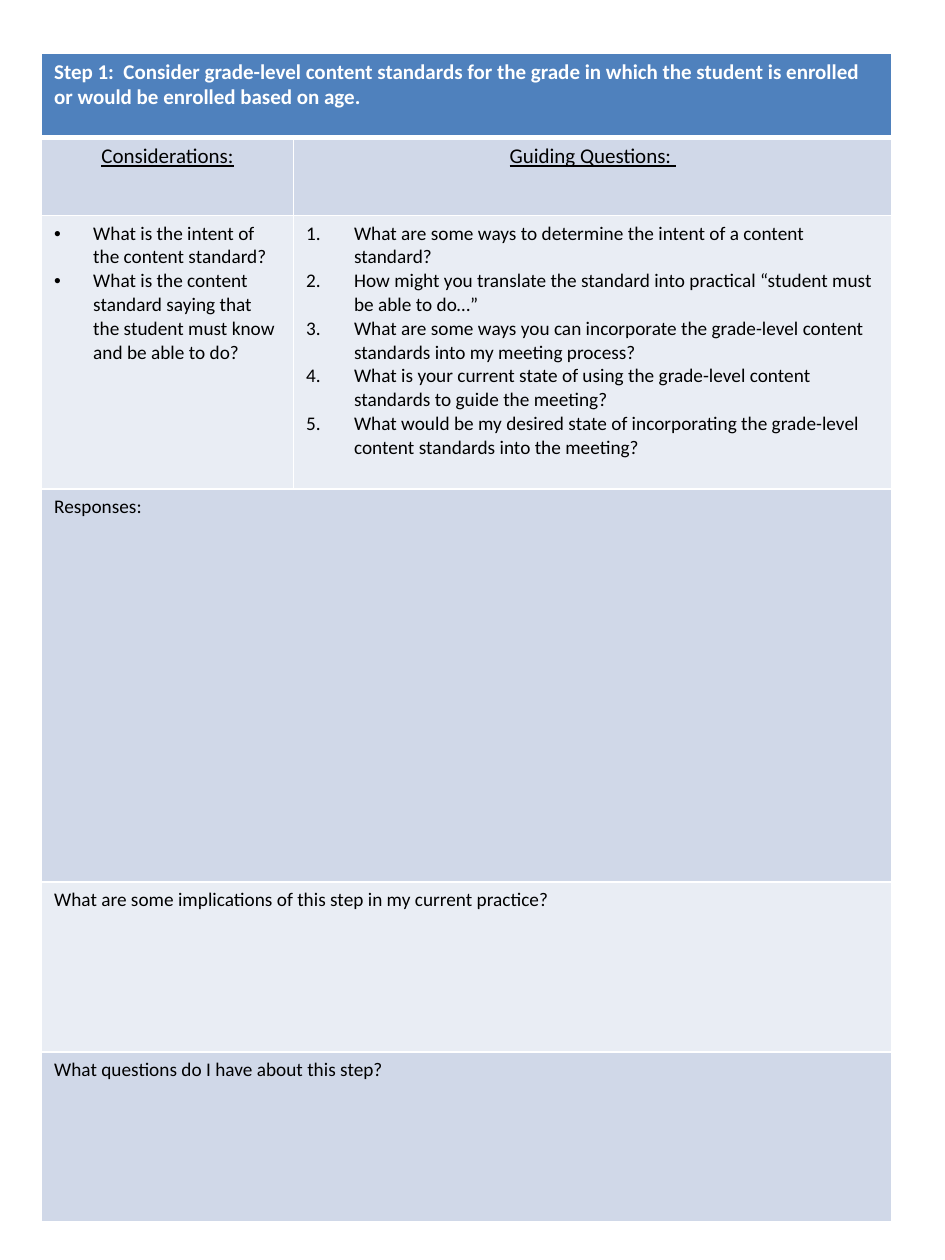
from lxml import etree
from pptx import Presentation
from pptx.dml.color import RGBColor
from pptx.enum import text
from pptx.oxml import ns
from pptx.util import Inches, Pt

HEADER, DARK, LIGHT = "4F81BD", "D0D8E8", "E9EDF4"
WHITE, BLACK = "FFFFFF", "000000"

COLUMN_WIDTHS = [2, 4.75]
CONSIDERATIONS = [
    "What is the intent of the content standard?",
    "What is the content standard saying that the student must know and be able to do?",
]
GUIDING_QUESTIONS = [
    "What are some ways to determine the intent of a content standard?",
    "How might you translate the standard into practical “student must be able to do…”",
    "What are some ways you can incorporate the grade-level content standards into my meeting process?",
    "What is your current state of using the grade-level content standards to guide the meeting?",
    "What would be my desired state of incorporating the grade-level content standards into the meeting?",
]
# Height, fill, font size, then the paragraphs of each cell; one cell spans the row
ROWS = [
    (0.67, HEADER, 12, [["Step 1:  Consider grade-level content standards for the grade "
                         "in which the student is enrolled or would be enrolled based on age."]]),
    (0.62, DARK, 12, [["Considerations:"], ["Guiding Questions: "]]),
    (2.17, LIGHT, 11, [CONSIDERATIONS, GUIDING_QUESTIONS]),
    (3.12, DARK, 11, [["Responses:"]]),
    (1.35, LIGHT, 11, [["What are some implications of this step in my current practice?"]]),
    (1.35, DARK, 11, [["What questions do I have about this step?"]]),
]
HEADING_ROW, LIST_ROW = 1, 2
# Marker tag, its attributes and the hanging indent for each list column
LIST_MARKERS = [
    ("a:buChar", {"char": "•"}, 0.31),
    ("a:buAutoNum", {"type": "arabicPeriod"}, 0.38),
]


def color(hex_value):
    return RGBColor.from_string(hex_value)


def set_borders(cell, top, bottom):
    """Draw white borders; top and bottom are widths in points."""
    properties = cell._tc.get_or_add_tcPr()
    for side, width in (("L", 1), ("R", 1), ("T", top), ("B", bottom)):
        line = etree.SubElement(properties, ns.qn(f"a:ln{side}"), w=str(Pt(width)))
        fill = etree.SubElement(line, ns.qn("a:solidFill"))
        etree.SubElement(fill, ns.qn("a:srgbClr"), val=WHITE)


def set_marker(para, tag, attributes, indent):
    properties = para._p.get_or_add_pPr()
    properties.set("marL", str(Inches(indent)))
    properties.set("indent", str(-Inches(indent)))
    etree.SubElement(properties, ns.qn("a:buFont"), typeface="Arial" if tag == "a:buChar" else "+mj-lt")
    etree.SubElement(properties, ns.qn(tag), attributes)


def write_cell(cell, row, column, size, lines):
    cell.text_frame.text = "\n".join(lines)
    for para in cell.text_frame.paragraphs:
        if row == HEADING_ROW:
            para.alignment = text.PP_ALIGN.CENTER
        if row == LIST_ROW:
            set_marker(para, *LIST_MARKERS[column])
        for span in para.runs:
            span.font.name = "Calibri"
            span.font.size = Pt(size)
            span.font.bold = row == 0
            span.font.underline = row == HEADING_ROW
            span.font.color.rgb = color(WHITE if row == 0 else BLACK)


def main():
    deck = Presentation()
    deck.slide_width, deck.slide_height = Inches(7.5), Inches(10)
    page = deck.slides.add_slide(deck.slide_layouts[6])

    worksheet = page.shapes.add_table(
        len(ROWS), len(COLUMN_WIDTHS), Inches(0.33), Inches(0.42),
        Inches(sum(COLUMN_WIDTHS)), Inches(sum(row[0] for row in ROWS))).table
    for column, width in zip(worksheet.columns, COLUMN_WIDTHS):
        column.width = Inches(width)

    for row, (height, fill, size, contents) in enumerate(ROWS):
        worksheet.rows[row].height = Inches(height)
        for cell in worksheet.rows[row].cells:
            set_borders(cell, top=3 if row == 1 else 1, bottom=3 if row == 0 else 1)
            cell.fill.solid()
            cell.fill.fore_color.rgb = color(fill)
        if len(contents) == 1:
            worksheet.cell(row, 0).merge(worksheet.cell(row, len(COLUMN_WIDTHS) - 1))
        for column, lines in enumerate(contents):
            write_cell(worksheet.cell(row, column), row, column, size, lines)

    deck.save("out.pptx")


if __name__ == "__main__":
    main()
